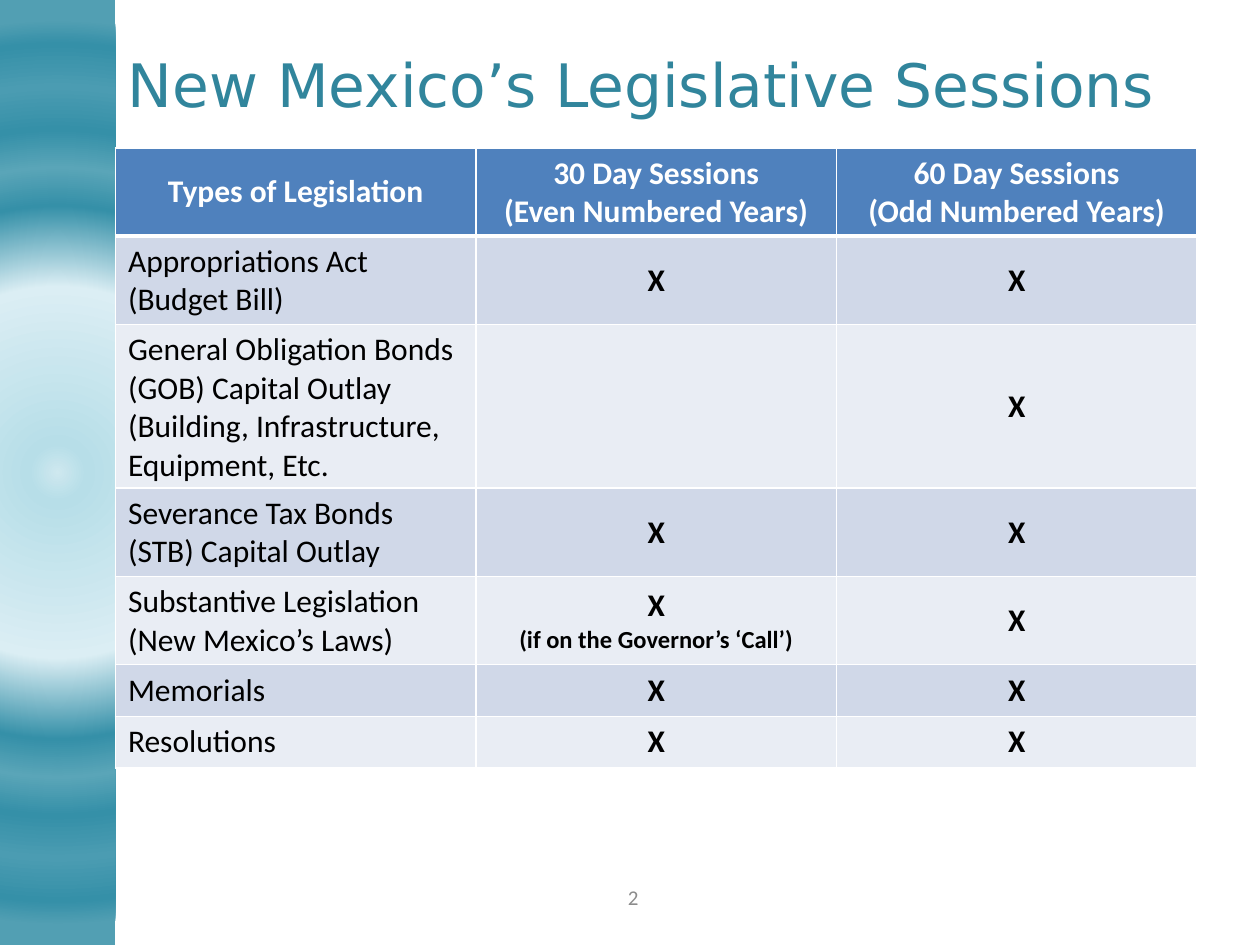
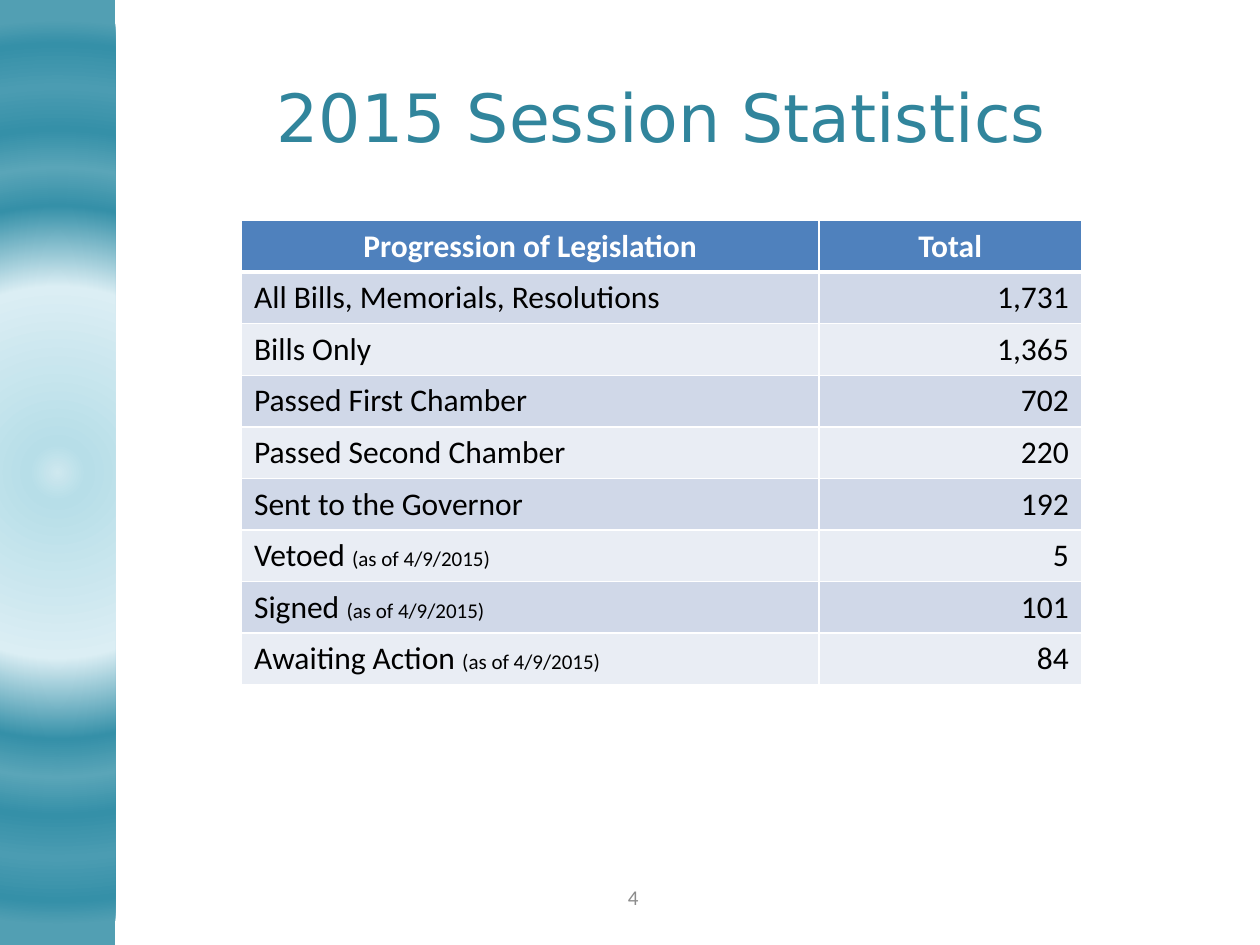
"""Build two slides on New Mexico's legislative sessions."""

from dataclasses import dataclass

from pptx import Presentation
from pptx.dml.color import RGBColor
from pptx.enum.shapes import MSO_SHAPE
from pptx.enum.text import MSO_ANCHOR, PP_ALIGN
from pptx.oxml import parse_xml
from pptx.oxml.ns import nsdecls, qn
from pptx.util import Pt


@dataclass(frozen=True)
class Theme:
    title_font: str = "DejaVu Sans"
    body_font: str = "Calibri"
    title_color: str = "31859C"
    header_fill: str = "4F81BD"
    row_fills: tuple = ("D0D8E8", "E9EDF4")
    white: str = "FFFFFF"
    black: str = "000000"
    number_color: str = "8C8C8C"
    body_size: float = 18
    number_size: float = 12
    border: float = 1
    header_border: float = 3
    row_height: float = 29.5
    band_stops: tuple = (
        (0, "CEE8EF"), (6, "B7DEE8"), (39, "DBEEF4"), (56, "3590A8"),
        (64, "5AA5B8"), (72, "3590A8"), (81, "4B9CB2"), (90, "3590A8"),
        (95, "529FB3"), (100, "529FB3"),
    )


@dataclass(frozen=True)
class Noted:
    text: str
    note: str
    note_size: float
    own_line: bool = False


THEME = Theme()
SLIDE_WIDTH, SLIDE_HEIGHT = 720, 540
BAND_WIDTH = 66
CENTER, LEFT, RIGHT = PP_ALIGN.CENTER, PP_ALIGN.LEFT, PP_ALIGN.RIGHT
AS_OF = "(as of 4/9/2015)"

SLIDES = [
    {
        "number": "2",
        "title": "New Mexico’s Legislative Sessions",
        "title_box": (66, 3, 612, 90),
        "title_size": 34.2,
        "title_align": LEFT,
        "table_at": (66, 84.5),
        "columns": (206, 206, 206),
        "value_align": CENTER,
        "value_bold": True,
        "rows": [
            ("Types of Legislation",
             "30 Day Sessions\n(Even Numbered Years)",
             "60 Day Sessions\n(Odd Numbered Years)"),
            ("Appropriations Act (Budget Bill)", "X", "X"),
            ("General Obligation Bonds (GOB) Capital Outlay\n"
             "(Building, Infrastructure, Equipment, Etc.", "", "X"),
            ("Severance Tax Bonds (STB) Capital Outlay", "X", "X"),
            ("Substantive Legislation (New Mexico’s Laws)",
             Noted("X", "(if on the Governor’s ‘Call’)", 14, own_line=True), "X"),
            ("Memorials", "X", "X"),
            ("Resolutions", "X", "X"),
        ],
    },
    {
        "number": "4",
        "title": "2015 Session Statistics",
        "title_box": (72, 21.5, 612, 90),
        "title_size": 38,
        "title_align": CENTER,
        "table_at": (138, 126),
        "columns": (330, 150),
        "value_align": RIGHT,
        "value_bold": False,
        "rows": [
            ("Progression of Legislation", "Total"),
            ("All Bills, Memorials, Resolutions", "1,731"),
            ("Bills Only", "1,365"),
            ("Passed First Chamber", "702"),
            ("Passed Second Chamber", "220"),
            ("Sent to the Governor", "192"),
            (Noted("Vetoed ", AS_OF, 12), "5"),
            (Noted("Signed ", AS_OF, 12), "101"),
            (Noted("Awaiting Action ", AS_OF, 12), "84"),
        ],
    },
]


def write_text(frame, text, *, size=THEME.body_size, color=THEME.black,
               font=THEME.body_font, bold=False, align=LEFT):
    """Fill a text frame with plain or noted text in one format."""
    if isinstance(text, Noted):
        runs = [(text.text, size), (text.note, text.note_size)]
        lines = [[run] for run in runs] if text.own_line else [runs]
    else:
        lines = [[(line, size)] for line in text.split("\n")]
    for index, line in enumerate(lines):
        paragraph = frame.add_paragraph() if index else frame.paragraphs[0]
        paragraph.alignment = align
        for content, run_size in line:
            run = paragraph.add_run()
            run.text = content
            run.font.name = font
            run.font.size = Pt(run_size)
            run.font.bold = bold
            run.font.color.rgb = RGBColor.from_string(color)


def add_text_box(slide, box, text, **text_format):
    """Add a wrapped, vertically centred text box."""
    frame = slide.shapes.add_textbox(*map(Pt, box)).text_frame
    frame.word_wrap = True
    frame.vertical_anchor = MSO_ANCHOR.MIDDLE
    write_text(frame, text, **text_format)


def add_band(slide):
    """Draw the rippled band along the left edge."""
    band = slide.shapes.add_shape(
        MSO_SHAPE.RECTANGLE, 0, 0, Pt(BAND_WIDTH), Pt(SLIDE_HEIGHT))
    band.shadow.inherit = False
    band.line.fill.background()
    band.fill.gradient()
    stops = "".join(
        f'<a:gs pos="{position * 1000}"><a:srgbClr val="{color}"/></a:gs>'
        for position, color in THEME.band_stops)
    gradient = parse_xml(
        f'<a:gradFill {nsdecls("a")} rotWithShape="1"><a:gsLst>{stops}</a:gsLst>'
        '<a:path path="circle"><a:fillToRect l="50000" t="50000" r="50000" b="50000"/>'
        '</a:path></a:gradFill>')
    properties = band._element.spPr
    properties.replace(properties.find(qn("a:gradFill")), gradient)


def set_borders(cell, top, bottom):
    """Give a cell white borders, with its own top and bottom widths."""
    properties = cell._tc.get_or_add_tcPr()
    widths = {"L": THEME.border, "R": THEME.border, "T": top, "B": bottom}
    for index, (side, width) in enumerate(widths.items()):
        properties.insert(index, parse_xml(
            f'<a:ln{side} {nsdecls("a")} w="{Pt(width)}"><a:solidFill>'
            f'<a:srgbClr val="{THEME.white}"/></a:solidFill></a:ln{side}>'))


def add_session_table(slide, content):
    """Add a banded table with a header row."""
    rows, columns = content["rows"], content["columns"]
    left, top = content["table_at"]
    table = slide.shapes.add_table(
        len(rows), len(columns), Pt(left), Pt(top),
        Pt(sum(columns)), Pt(THEME.row_height * len(rows))).table
    for column, width in zip(table.columns, columns):
        column.width = Pt(width)
    for row_index, row in enumerate(rows):
        is_header = row_index == 0
        fill = THEME.header_fill if is_header else THEME.row_fills[(row_index - 1) % 2]
        for column_index, text in enumerate(row):
            is_value = column_index > 0
            cell = table.cell(row_index, column_index)
            cell.fill.solid()
            cell.fill.fore_color.rgb = RGBColor.from_string(fill)
            cell.vertical_anchor = MSO_ANCHOR.MIDDLE
            set_borders(
                cell,
                top=THEME.header_border if row_index == 1 else THEME.border,
                bottom=THEME.header_border if is_header else THEME.border)
            if is_header:
                write_text(cell.text_frame, text, color=THEME.white, bold=True, align=CENTER)
            elif is_value:
                write_text(cell.text_frame, text, bold=content["value_bold"],
                           align=content["value_align"])
            else:
                write_text(cell.text_frame, text)


def add_slide(presentation, content):
    """Add one slide with its band, number, title and table."""
    slide = presentation.slides.add_slide(presentation.slide_layouts[6])
    add_band(slide)
    add_text_box(slide, (342, 498.5, 30, 28.5), content["number"],
                 size=THEME.number_size, color=THEME.number_color, align=RIGHT)
    add_text_box(slide, content["title_box"], content["title"],
                 size=content["title_size"], color=THEME.title_color,
                 font=THEME.title_font, align=content["title_align"])
    add_session_table(slide, content)


def main():
    """Build and save the presentation."""
    presentation = Presentation()
    presentation.slide_width = Pt(SLIDE_WIDTH)
    presentation.slide_height = Pt(SLIDE_HEIGHT)
    for content in SLIDES:
        add_slide(presentation, content)
    presentation.save("out.pptx")


if __name__ == "__main__":
    main()
